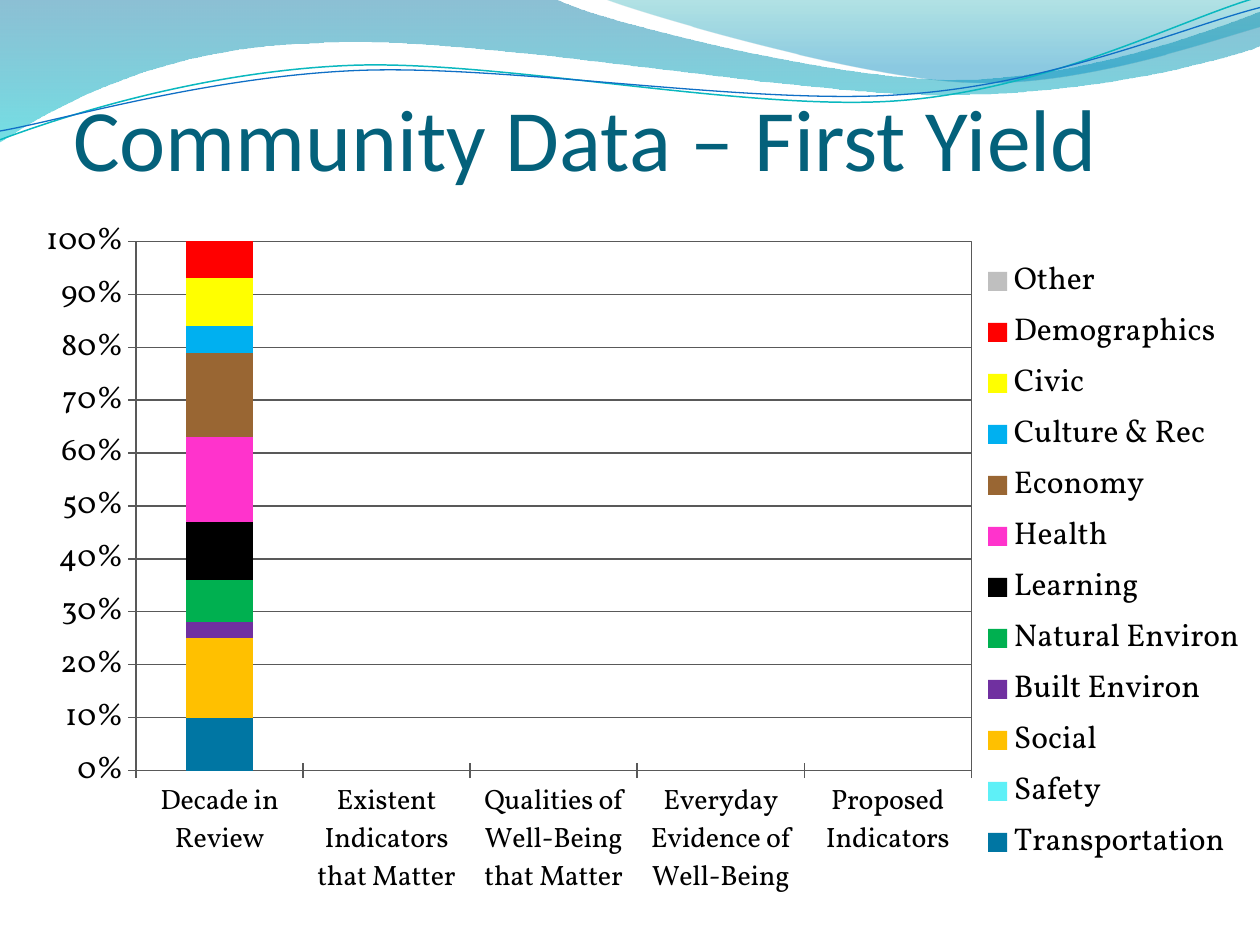
import pptx
import pptx.chart.data
import pptx.dml.color
import pptx.enum.chart
import pptx.enum.text
import pptx.oxml.ns
import pptx.util
import lxml.etree

Inches = pptx.util.Inches
qn = pptx.oxml.ns.qn
UNITS_PER_INCH = 1000

COLORS = {
    "white": "FFFFFF", "black": "000000", "title": "04617B", "grid": "595959",
    "wave_top": "0074A1", "wave_bottom": "00C6CF",
    "crest_top": "00A1A9", "crest_bottom": "008BBF",
    "teal_line": "0AB8BF", "blue_line": "0F6FC6",
}
CATEGORIES = [
    "Decade in Review", "Existent Indicators that Matter",
    "Qualities of Well-Being that Matter", "Everyday Evidence of Well-Being",
    "Proposed Indicators",
]
SERIES = [
    ("Transportation", 0.1, "0076A3"), ("Safety", 0, "5EF0F7"),
    ("Social", 0.15, "FFC000"), ("Built Environ", 0.03, "7030A0"),
    ("Natural Environ", 0.08, "00B050"), ("Learning", 0.11, "000000"),
    ("Health", 0.16, "FF33CC"), ("Economy", 0.16, "996633"),
    ("Culture & Rec", 0.05, "00B0F0"), ("Civic", 0.09, "FFFF00"),
    ("Demographics", 0.07, "FF0000"), ("Other", 0, "BFBFBF"),
]
WAVE = [
    (0, 0), (4.4, -0.01), (4.76, 0.17, 6.64, 0.63, 7.58, 0.63),
    (8.53, 0.63, 9.58, 0.26, 10, 0.09), (10.01, 0.36),
    (9.83, 0.44, 8.7, 0.76, 7.46, 0.75), (6.22, 0.75, 3.82, 0.28, 2.57, 0.34),
    (1.29, 0.36, 0.46, 0.83, -0.01, 1.13),
]
CREST = [
    (4.79, -0.01), (5.09, 0.11, 6.82, 0.62, 7.69, 0.65),
    (8.56, 0.69, 9.61, 0.32, 10, 0.21), (10, 0),
]
TEAL_CURVE = [
    (0, 1.11), (0.48, 0.93, 1.58, 0.57, 2.77, 0.52),
    (3.95, 0.47, 5.93, 0.89, 7.13, 0.8), (8.33, 0.71, 9.38, 0.15, 9.98, -0.02),
]
BLUE_CURVE = [
    (0, 1.04), (0.47, 0.96, 1.64, 0.61, 2.83, 0.56),
    (4.03, 0.51, 5.97, 0.84, 7.17, 0.75), (8.36, 0.67, 9.41, 0.21, 10, 0.06),
]


def rgb(value):
    return pptx.dml.color.RGBColor.from_string(value)


def add_element(parent, tag, **attributes):
    return lxml.etree.SubElement(parent, qn(tag), **attributes)


def set_font(font, size, name, color):
    font.size = pptx.util.Pt(size)
    font.name = name
    font.color.rgb = rgb(color)


def write_text(paragraph, text, size=18, font="Calibri", color=COLORS["black"]):
    run = paragraph.add_run()
    run.text = text
    set_font(run.font, size, font, color)


def set_plot_layout(plot_area, box):
    layout = plot_area.find(qn("c:layout"))
    if layout is not None:
        plot_area.remove(layout)
    layout = add_element(plot_area, "c:layout")
    plot_area.insert(0, layout)
    manual = add_element(layout, "c:manualLayout")
    add_element(manual, "c:layoutTarget", val="inner")
    for tag in ("c:xMode", "c:yMode"):
        add_element(manual, tag, val="edge")
    for tag, value in zip(("c:x", "c:y", "c:w", "c:h"), box):
        add_element(manual, tag, val=str(value))


class SlideBuilder:
    def __init__(self, slide, font="Vollkorn"):
        self.slide = slide
        self.font = font
        slide.background.fill.solid()
        slide.background.fill.fore_color.rgb = rgb(COLORS["white"])

    def add_outline(self, segments, closed):
        scaled = [[round(value * UNITS_PER_INCH) for value in segment] for segment in segments]
        anchors = [segment[-2:] for segment in scaled]
        left = min(x for x, _ in anchors)
        top = min(y for _, y in anchors)
        builder = self.slide.shapes.build_freeform(
            *anchors[0], scale=Inches(1) / UNITS_PER_INCH)
        builder.add_line_segments(anchors[1:], close=closed)
        shape = builder.convert_to_shape()
        shape.shadow.inherit = False
        lines = list(shape._element.iter(qn("a:lnTo")))
        for line, segment in zip(lines, scaled[1:]):
            if len(segment) == 6:
                curve = lxml.etree.Element(qn("a:cubicBezTo"))
                for x, y in zip(segment[::2], segment[1::2]):
                    add_element(curve, "a:pt", x=str(x - left), y=str(y - top))
                line.getparent().replace(line, curve)
        return shape

    def add_wave(self, segments, stops):
        shape = self.add_outline(segments, True)
        shape.line.fill.background()
        shape.fill.gradient()
        gradient = shape._element.spPr.find(qn("a:gradFill"))
        for child in list(gradient):
            gradient.remove(child)
        stop_list = add_element(gradient, "a:gsLst")
        for position, color, opacity in stops:
            stop = add_element(stop_list, "a:gs", pos=str(position * 1000))
            fill = add_element(stop, "a:srgbClr", val=color)
            add_element(fill, "a:alpha", val=str(opacity * 1000))
        add_element(gradient, "a:lin", ang="5400000", scaled="0")

    def add_curve(self, segments, color, width):
        shape = self.add_outline(segments, False)
        shape.fill.background()
        shape.line.color.rgb = rgb(color)
        shape.line.width = pptx.util.Pt(width)

    def add_title(self, text, left, top, width, height):
        box = self.slide.shapes.add_textbox(
            Inches(left), Inches(top), Inches(width), Inches(height))
        frame = box.text_frame
        frame.word_wrap = True
        frame.vertical_anchor = pptx.enum.text.MSO_ANCHOR.BOTTOM
        frame.margin_left = frame.margin_right = frame.margin_bottom = 0
        frame.margin_top = Inches(0.05)
        write_text(frame.paragraphs[0], text, size=50, color=COLORS["title"])

    def add_stacked_chart(self, left, top, width, height):
        data = pptx.chart.data.CategoryChartData(number_format="0%")
        data.categories = CATEGORIES
        for name, share, _ in SERIES:
            data.add_series(name, [share] + [None] * (len(CATEGORIES) - 1))
        chart = self.slide.shapes.add_chart(
            pptx.enum.chart.XL_CHART_TYPE.COLUMN_STACKED,
            Inches(left), Inches(top), Inches(width), Inches(height), data).chart
        chart.has_title = False
        set_font(chart.font, 18, self.font, COLORS["black"])

        plot = chart.plots[0]
        plot.vary_by_categories = False
        plot.overlap = 100
        plot.gap_width = 150
        for series, (_, _, color) in zip(plot.series, SERIES):
            series.format.fill.solid()
            series.format.fill.fore_color.rgb = rgb(color)
            series.format.line.fill.background()

        self.style_axes(chart)
        chart.has_legend = True
        chart.legend.position = pptx.enum.chart.XL_LEGEND_POSITION.RIGHT
        chart.legend.include_in_layout = False
        set_font(chart.legend.font, 18, self.font, COLORS["black"])

        plot_area = chart._chartSpace.chart.plotArea
        set_plot_layout(plot_area, (0.085, 0.044, 0.68, 0.753))
        properties = add_element(plot_area, "c:spPr")
        add_element(properties, "a:noFill")
        border = add_element(properties, "a:ln", w="9525")
        fill = add_element(border, "a:solidFill")
        add_element(fill, "a:srgbClr", val=COLORS["grid"])

    def style_axes(self, chart):
        value_axis, category_axis = chart.value_axis, chart.category_axis
        value_axis.minimum_scale = 0
        value_axis.maximum_scale = 1
        value_axis.major_unit = 0.1
        value_axis.has_major_gridlines = True
        value_axis.tick_labels.number_format = "0%"
        value_axis.tick_labels.number_format_is_linked = False
        for axis, size in ((value_axis, 18), (category_axis, 16)):
            axis.major_tick_mark = pptx.enum.chart.XL_TICK_MARK.CROSS
            set_font(axis.tick_labels.font, size, self.font, COLORS["black"])
        for part in (value_axis, category_axis, value_axis.major_gridlines):
            part.format.line.color.rgb = rgb(COLORS["grid"])
            part.format.line.width = pptx.util.Pt(0.75)


def main():
    presentation = pptx.Presentation()
    presentation.slide_width = Inches(10)
    presentation.slide_height = Inches(7.5)
    builder = SlideBuilder(presentation.slides.add_slide(presentation.slide_layouts[6]))
    builder.add_wave(WAVE, [(0, COLORS["wave_top"], 45), (100, COLORS["wave_bottom"], 55)])
    builder.add_wave(CREST, [(0, COLORS["crest_top"], 30), (80, COLORS["crest_bottom"], 45)])
    builder.add_curve(TEAL_CURVE, COLORS["teal_line"], 0.85)
    builder.add_curve(BLUE_CURVE, COLORS["blue_line"], 0.75)
    builder.add_title("Community Data – First Yield", 0.58, 0.25, 9, 1.25)
    builder.add_stacked_chart(0.25, 1.67, 9.75, 5.58)
    presentation.save("out.pptx")


if __name__ == "__main__":
    main()
